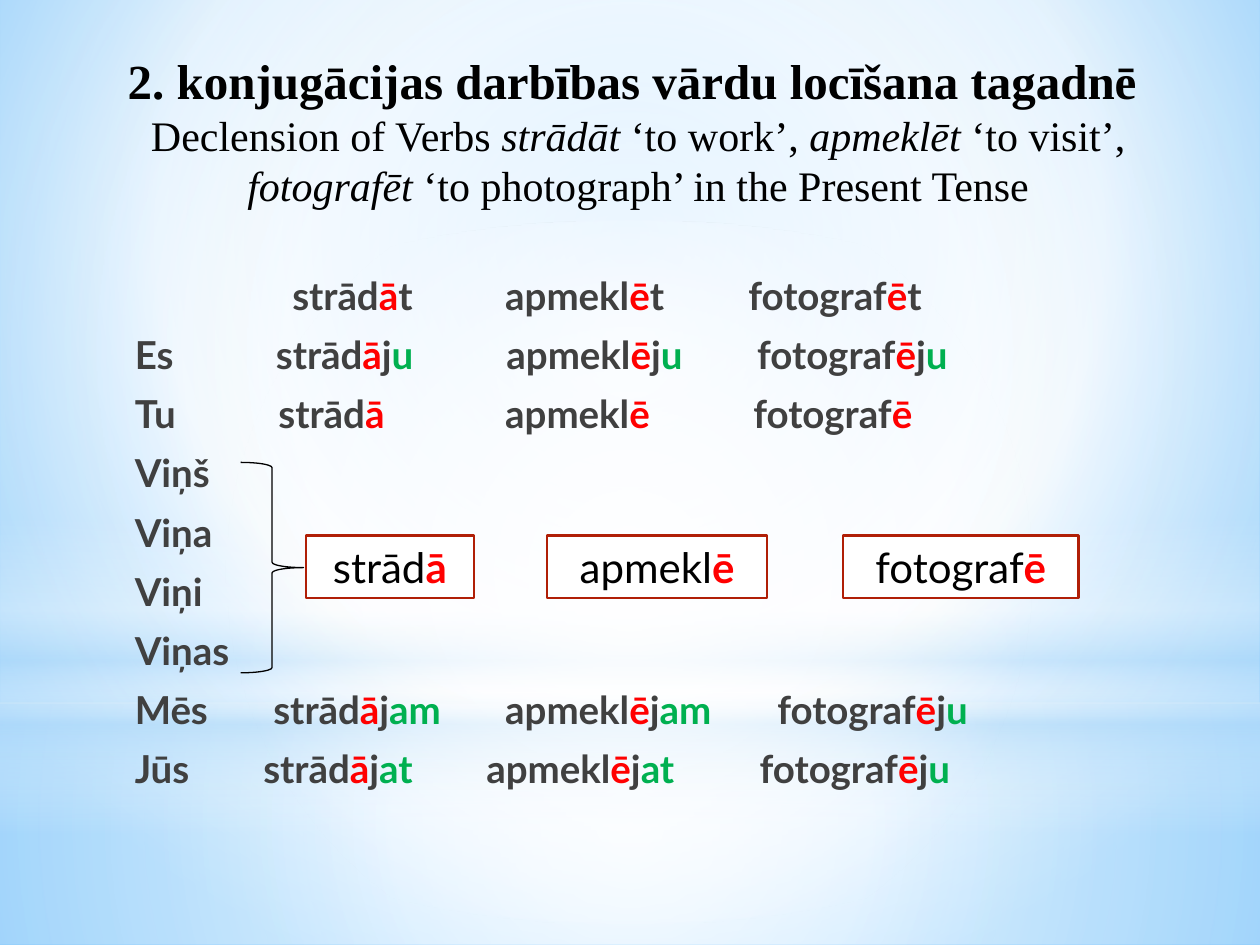
import pptx
import pptx.dml.color
import pptx.enum.shapes
import pptx.enum.text
import pptx.oxml
import pptx.oxml.ns
import pptx.util
from dataclasses import dataclass

Inches = pptx.util.Inches
Pt = pptx.util.Pt
SHAPES = pptx.enum.shapes.MSO_SHAPE
ALIGN = pptx.enum.text.PP_ALIGN
ANCHOR = pptx.enum.text.MSO_ANCHOR


@dataclass(frozen=True)
class Theme:
    black: str = "000000"
    white: str = "FFFFFF"
    text: str = "404040"
    vowel: str = "FF0000"
    ending: str = "00B050"
    border: str = "B01F07"
    sky: str = "B4DCFA"
    heading_font: str = "Times New Roman"
    body_font: str = "Lato"
    title_size: int = 28
    subtitle_size: int = 24
    table_size: int = 22
    box_size: int = 24


THEME = Theme()

# Verb stem and the vowel that closes it
VERBS = [("strād", "ā"), ("apmekl", "ē"), ("fotograf", "ē")]

# Pronoun, column starts in inches, (plain, highlighted) ending of each verb
ROWS = [
    ("", (1.25, 2.94, 4.87), [("t", "")] * 3),
    ("Es", (1.12, 2.95, 4.94), [("j", "u")] * 3),
    ("Tu", (1.14, 2.94, 4.91), [("", "")] * 3),
    ("Viņš", (), []),
    ("Viņa", (), []),
    ("Viņi", (), []),
    ("Viņas", (), []),
    ("Mēs", (1.10, 2.94, 5.10), [("j", "am"), ("j", "am"), ("j", "u")]),
    ("Jūs", (1.02, 2.79, 4.96), [("j", "at"), ("j", "at"), ("j", "u")]),
]

# Left and width of the third-person boxes
BOXES = [(2.43, 1.33), (4.34, 1.75), (6.69, 1.87)]

CENTRE = (50, 50, 50, 50)

# Shape, top, height, (position, colour, opacity) stops, focus rectangle
LAYERS = [
    (SHAPES.RECTANGLE, 5.58, 1.92,
     [(0, THEME.white, 91), (37, THEME.white, 76), (100, THEME.sky, 79)], CENTRE),
    (SHAPES.RECTANGLE, 0, 5.58,
     [(0, THEME.white, 89), (48, THEME.white, 62), (100, THEME.sky, 79)], CENTRE),
    (SHAPES.RECTANGLE, 4.12, 2.5,
     [(0, THEME.white, 0), (29, THEME.white, 30), (45, THEME.sky, 40),
      (55, THEME.white, 26), (65, THEME.sky, 60), (100, THEME.white, 0)], None),
    (SHAPES.OVAL, 1.75, 5.58,
     [(0, THEME.white, 100), (56, THEME.white, 0)], CENTRE),
]
BACKDROP = [(0, "9ED5FF", 100), (60, THEME.white, 100), (100, "5BB9FF", 100)]


def rgb(value):
    return pptx.dml.color.RGBColor.from_string(value)


def set_gradient(fill, owner, stops, focus):
    """Radial gradient towards the focus, or a vertical one without a focus."""
    fill.gradient()
    old = next(owner.iter(pptx.oxml.ns.qn("a:gradFill")))
    stop_xml = "".join(
        f'<a:gs pos="{position * 1000}"><a:srgbClr val="{color}">'
        f'<a:alpha val="{opacity * 1000}"/></a:srgbClr></a:gs>'
        for position, color, opacity in stops)
    if focus:
        sides = " ".join(f'{side}="{value * 1000}"' for side, value in zip("ltrb", focus))
        direction = f'<a:path path="circle"><a:fillToRect {sides}/></a:path>'
    else:
        direction = '<a:lin ang="5400000" scaled="0"/>'
    new = pptx.oxml.parse_xml(
        f'<a:gradFill {pptx.oxml.ns.nsdecls("a")} rotWithShape="1">'
        f'<a:gsLst>{stop_xml}</a:gsLst>{direction}</a:gradFill>')
    old.getparent().replace(old, new)


def add_shape(slide, kind, left, top, width, height):
    shape = slide.shapes.add_shape(
        kind, Inches(left), Inches(top), Inches(width), Inches(height))
    shape.shadow.inherit = False
    return shape


def add_text_box(slide, left, top, width, height):
    box = slide.shapes.add_textbox(
        Inches(left), Inches(top), Inches(width), Inches(height))
    box.text_frame.word_wrap = True
    return box.text_frame


def add_run(paragraph, text, color, **font_values):
    run = paragraph.add_run()
    run.text = text
    run.font.color.rgb = rgb(color)
    for name, value in font_values.items():
        setattr(run.font, name, value)


def next_paragraph(frame, index):
    return frame.paragraphs[0] if index == 0 else frame.add_paragraph()


def add_tab_stops(paragraph, positions):
    stops = "".join(f'<a:tab pos="{Inches(position)}" algn="l"/>' for position in positions)
    paragraph._p.get_or_add_pPr().append(pptx.oxml.parse_xml(
        f'<a:tabLst {pptx.oxml.ns.nsdecls("a")}>{stops}</a:tabLst>'))


def add_backdrop(slide):
    set_gradient(slide.background.fill, slide._element, BACKDROP, (20, 10, 20, 60))
    for kind, top, height, stops, focus in LAYERS:
        layer = add_shape(slide, kind, 0, top, 10, height)
        layer.line.fill.background()
        set_gradient(layer.fill, layer._element.spPr, stops, focus)


def add_title(slide):
    frame = add_text_box(slide, 0.15, 0.35, 9.83, 1.38)
    bold = {"bold": True, "size": Pt(THEME.title_size)}
    plain = {"size": Pt(THEME.subtitle_size)}
    italic = {**plain, "italic": True}
    lines = [
        [("2. konjugācijas darbības vārdu locīšana tagadnē ", bold)],
        [("Declension of Verbs ", plain), ("strādāt ", italic), ("‘to work’, ", plain),
         ("apmeklēt ", italic), ("‘to visit’,", plain)],
        [("fotografēt ", italic), ("‘to photograph’ in the Present Tense", plain)],
    ]
    for index, line in enumerate(lines):
        paragraph = next_paragraph(frame, index)
        paragraph.alignment = ALIGN.CENTER
        for text, values in line:
            add_run(paragraph, text, THEME.black, name=THEME.heading_font, **values)


def add_conjugation(slide):
    frame = add_text_box(slide, 0.92, 2.11, 8.67, 4.92)
    frame.margin_left = Inches(0.15)
    font = {"name": THEME.body_font, "size": Pt(THEME.table_size), "bold": True}
    for index, (pronoun, columns, endings) in enumerate(ROWS):
        paragraph = next_paragraph(frame, index)
        paragraph.space_before = Pt(4.4)
        paragraph.space_after = Pt(3)
        if columns:
            add_tab_stops(paragraph, columns)
        pieces = [(pronoun, THEME.text)]
        for (stem, vowel), (plain, highlighted) in zip(VERBS, endings):
            pieces += [("\t" + stem, THEME.text), (vowel, THEME.vowel),
                       (plain, THEME.text), (highlighted, THEME.ending)]
        for text, color in pieces:
            if text:
                add_run(paragraph, text, color, **font)


def add_third_person(slide):
    brace = add_shape(slide, SHAPES.RIGHT_BRACE, 1.91, 3.67, 0.5, 1.67)
    brace.fill.background()
    brace.line.color.rgb = rgb(THEME.black)
    brace.line.width = Pt(0.75)

    font = {"name": THEME.body_font, "size": Pt(THEME.box_size)}
    for (left, width), (stem, vowel) in zip(BOXES, VERBS):
        box = add_shape(slide, SHAPES.RECTANGLE, left, 4.25, width, 0.5)
        box.fill.solid()
        box.fill.fore_color.rgb = rgb(THEME.white)
        box.line.color.rgb = rgb(THEME.border)
        box.line.width = Pt(1.25)
        box.text_frame.vertical_anchor = ANCHOR.MIDDLE
        paragraph = box.text_frame.paragraphs[0]
        paragraph.alignment = ALIGN.CENTER
        add_run(paragraph, stem, THEME.black, **font)
        add_run(paragraph, vowel, THEME.vowel, bold=True, **font)


def main():
    presentation = pptx.Presentation()
    presentation.slide_width = Inches(10)
    presentation.slide_height = Inches(7.5)
    slide = presentation.slides.add_slide(presentation.slide_layouts[6])
    add_backdrop(slide)
    add_title(slide)
    add_conjugation(slide)
    add_third_person(slide)
    presentation.save("out.pptx")


if __name__ == "__main__":
    main()
